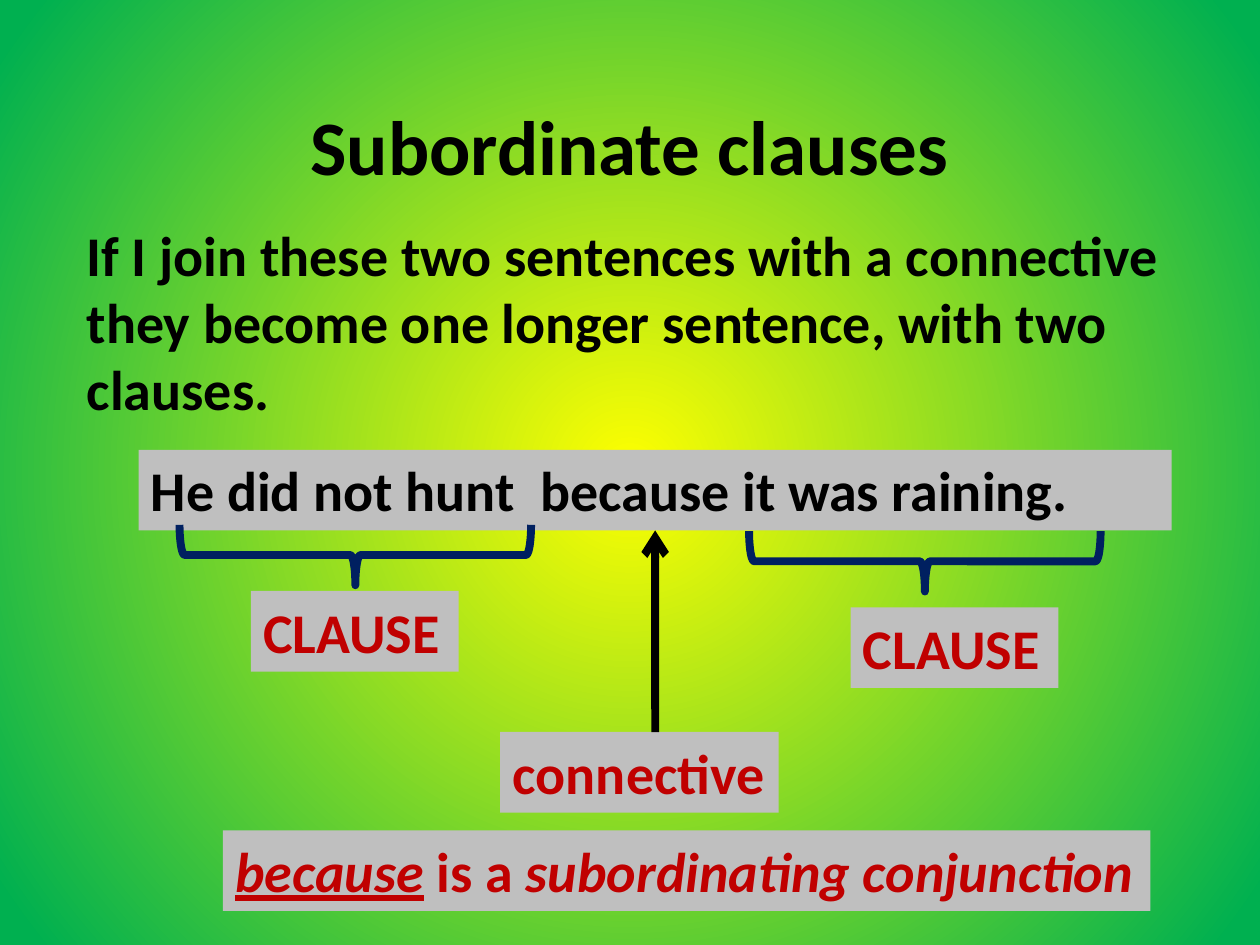
from dataclasses import dataclass

from lxml import etree
from pptx import Presentation
from pptx.dml.color import RGBColor
from pptx.enum import shapes, text
from pptx.oxml.ns import qn
from pptx.util import Inches, Pt

COLOURS = {"centre": "FFFF00", "edge": "00B050", "label": "BFBFBF",
           "ink": "000000", "accent": "C00000", "brace": "002060"}
FONT = "Calibri"
LABEL_HEIGHT = 0.64
BRACE_DEPTH, BRACE_SPAN = 0.48, 2.79
LINE_WIDTH = Pt(4.5)


@dataclass
class Span:
    words: str
    italic: bool = False
    underline: bool = False


@dataclass
class Label:
    left: float
    top: float
    width: float
    spans: list[Span]
    colour: str = "accent"


SENTENCE = Label(1.1, 3.57, 8.2, [Span("He did not hunt  because it was raining.")], "ink")
LABELS = [
    Label(1.99, 4.69, 1.65, [Span("CLAUSE")]),
    Label(6.75, 4.82, 1.65, [Span("CLAUSE")]),
    Label(3.97, 5.81, 2.21, [Span("connective")]),
    Label(1.77, 6.59, 7.36, [Span("because", italic=True, underline=True),
                             Span(" is a "),
                             Span("subordinating conjunction", italic=True)]),
]
BRACES = [(2.58, 3.01), (7.1, 3.06)]
ARROW_X, ARROW_START = 5.2, 5.81


def rgb(name: str) -> RGBColor:
    return RGBColor.from_string(COLOURS[name])


def paint_background(page) -> None:
    """Fill the page with a circular gradient spreading from its middle."""
    fill = page.background.fill
    fill.gradient()
    for stop, (name, position) in zip(fill.gradient_stops, [("centre", 0), ("edge", 0.96)]):
        stop.color.rgb = rgb(name)
        stop.position = position
    gradient = page.element.find(".//" + qn("a:gradFill"))
    gradient.remove(gradient.find(qn("a:lin")))
    circle = etree.SubElement(gradient, qn("a:path"), {"path": "circle"})
    middle = {side: "50000" for side in "ltrb"}
    etree.SubElement(circle, qn("a:fillToRect"), middle)


def write(box, spans: list[Span], colour: str, size: int = 32,
          align=text.PP_ALIGN.LEFT, anchor=text.MSO_ANCHOR.TOP) -> None:
    frame = box.text_frame
    frame.word_wrap = True
    frame.vertical_anchor = anchor
    para = frame.paragraphs[0]
    para.alignment = align
    for span in spans:
        run = para.add_run()
        run.text = span.words
        font = run.font
        font.name, font.size, font.bold = FONT, Pt(size), True
        font.italic, font.underline = span.italic, span.underline
        font.color.rgb = rgb(colour)


def add_label(page, label: Label):
    box = page.shapes.add_shape(
        shapes.MSO_SHAPE.RECTANGLE, Inches(label.left), Inches(label.top),
        Inches(label.width), Inches(LABEL_HEIGHT))
    box.shadow.inherit = False
    box.fill.solid()
    box.fill.fore_color.rgb = rgb("label")
    box.line.fill.background()
    write(box, label.spans, label.colour)
    return box


def add_brace(page, left: float, top: float) -> None:
    """Add a right brace turned to open upwards; left and top are before the turn."""
    brace = page.shapes.add_shape(
        shapes.MSO_SHAPE.RIGHT_BRACE, Inches(left), Inches(top),
        Inches(BRACE_DEPTH), Inches(BRACE_SPAN))
    brace.rotation = 90
    brace.shadow.inherit = False
    brace.fill.background()
    brace.line.color.rgb = rgb("brace")
    brace.line.width = LINE_WIDTH


def add_arrow(page, sentence_box) -> None:
    x = Inches(ARROW_X)
    arrow = page.shapes.add_connector(
        shapes.MSO_CONNECTOR.STRAIGHT, x, Inches(ARROW_START),
        x, Inches(SENTENCE.top + LABEL_HEIGHT))
    arrow.end_connect(sentence_box, 2)
    arrow.line.color.rgb = rgb("ink")
    arrow.line.width = LINE_WIDTH
    etree.SubElement(arrow.line._get_or_add_ln(), qn("a:tailEnd"), {"type": "arrow"})
    etree.SubElement(arrow.element.spPr, qn("a:effectLst"))


def main() -> None:
    deck = Presentation()
    deck.slide_width, deck.slide_height = Inches(10), Inches(7.5)
    page = deck.slides.add_slide(deck.slide_layouts[6])
    paint_background(page)

    title = page.shapes.add_textbox(Inches(0.75), Inches(0.52), Inches(8.5), Inches(1.26))
    write(title, [Span("Subordinate clauses")], "ink", 44,
          text.PP_ALIGN.CENTER, text.MSO_ANCHOR.MIDDLE)
    intro = page.shapes.add_textbox(Inches(0.59), Inches(1.7), Inches(9.06), Inches(1.73))
    write(intro, [Span("If I join these two sentences with a connective they become "
                       "one longer sentence, with two clauses.")], "ink")

    sentence_box = add_label(page, SENTENCE)
    for label in LABELS:
        add_label(page, label)
    for left, top in BRACES:
        add_brace(page, left, top)
    add_arrow(page, sentence_box)
    deck.save("out.pptx")


if __name__ == "__main__":
    main()
